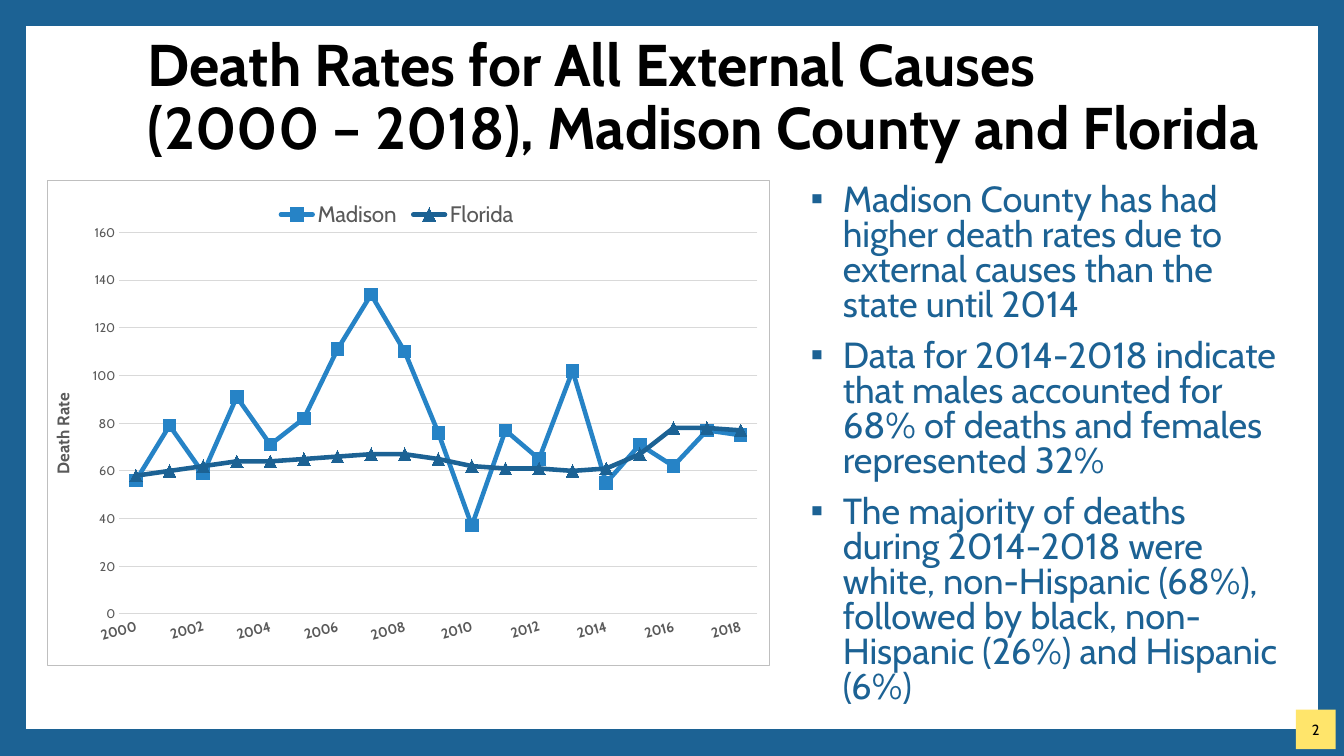
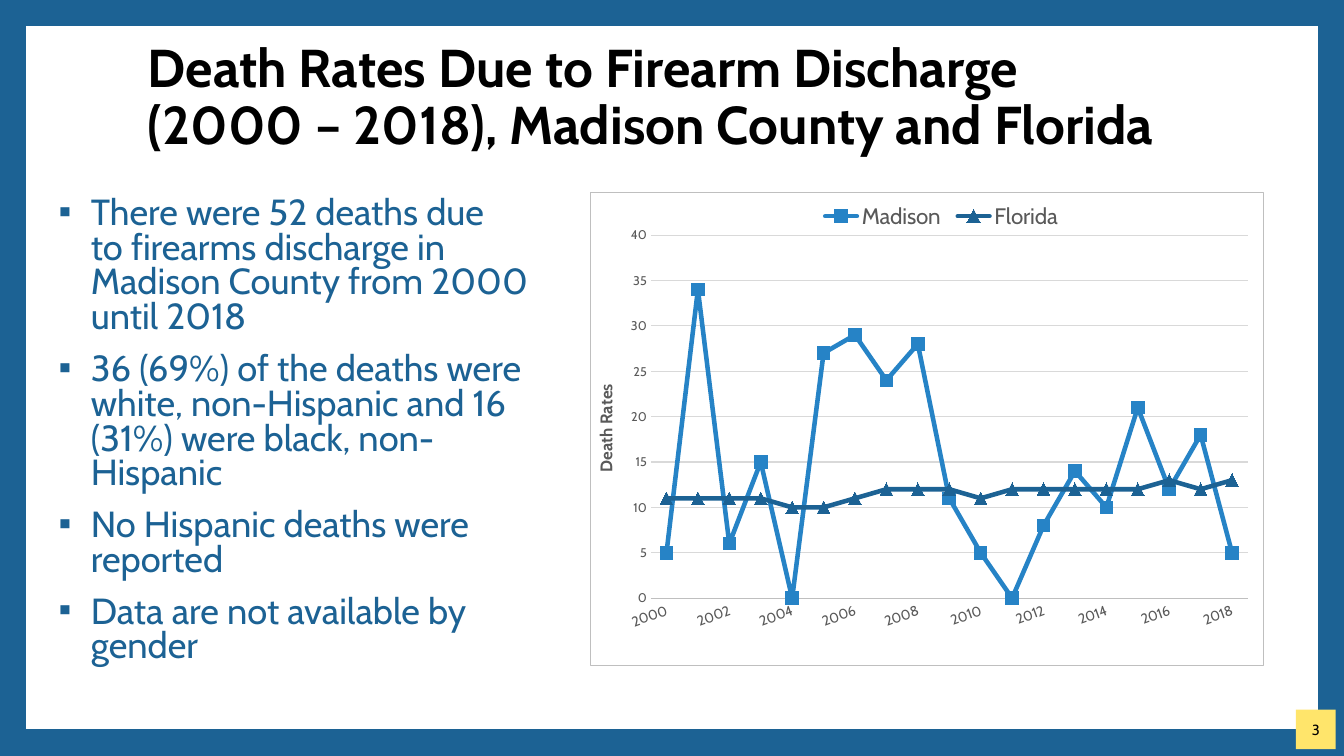
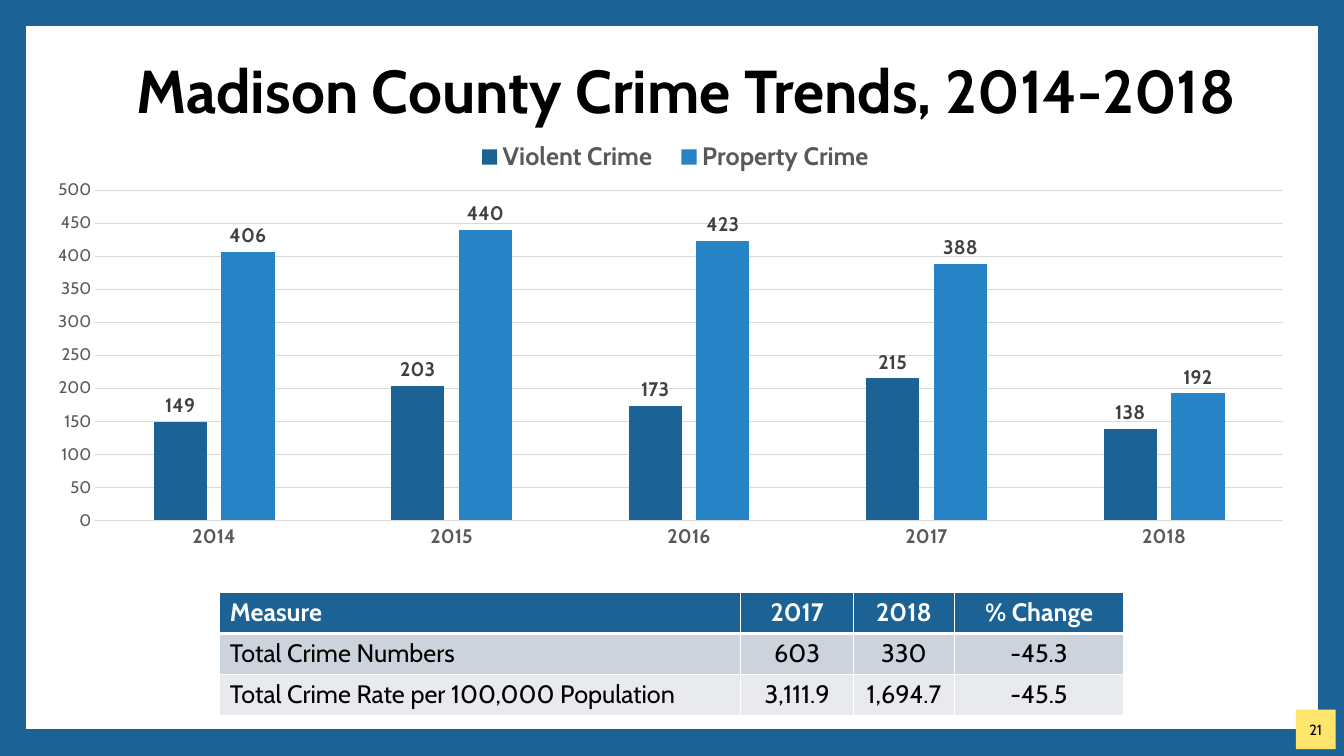
from dataclasses import dataclass
from typing import Any, Optional

from lxml import etree
from pptx import Presentation
from pptx.chart.data import CategoryChartData
from pptx.dml.color import RGBColor
from pptx.enum.chart import (XL_CHART_TYPE, XL_LABEL_POSITION, XL_LEGEND_POSITION,
                             XL_MARKER_STYLE, XL_TICK_MARK)
from pptx.enum.shapes import MSO_SHAPE
from pptx.enum.text import MSO_ANCHOR, MSO_AUTO_SIZE, PP_ALIGN
from pptx.oxml.ns import qn
from pptx.util import Cm, Pt

LINES = XL_CHART_TYPE.LINE_MARKERS
BARS = XL_CHART_TYPE.COLUMN_CLUSTERED
SQUARE = XL_MARKER_STYLE.SQUARE
TRIANGLE = XL_MARKER_STYLE.TRIANGLE
OUTSIDE = XL_LABEL_POSITION.OUTSIDE_END
BOTTOM = XL_LEGEND_POSITION.BOTTOM
NO_TICK = XL_TICK_MARK.NONE
RECT = MSO_SHAPE.RECTANGLE
MIDDLE = MSO_ANCHOR.MIDDLE
LEFT, CENTER = PP_ALIGN.LEFT, PP_ALIGN.CENTER
NO_FIT = MSO_AUTO_SIZE.NONE

FONT = "Cabin"
NAVY = RGBColor(0x1C, 0x62, 0x94)
BLUE = RGBColor(0x26, 0x83, 0xC6)
YELLOW = RGBColor(0xFF, 0xE5, 0x6B)
BLACK = RGBColor(0, 0, 0)
WHITE = RGBColor(0xFF, 0xFF, 0xFF)
DARK = RGBColor(0x40, 0x40, 0x40)
GREY = RGBColor(0x59, 0x59, 0x59)
EDGE = RGBColor(0xBF, 0xBF, 0xBF)
GRID = RGBColor(0xD9, 0xD9, 0xD9)
BANDS = [RGBColor(0xCD, 0xD3, 0xDC), RGBColor(0xE8, 0xEA, 0xEE)]

WIDE, HIGH = 33.87, 19.05
YEARS = [str(year) for year in range(2000, 2019)]


@dataclass
class Box:
    """A place on the slide, in centimetres."""
    left: float
    top: float
    width: float
    height: float

    def lengths(self) -> tuple:
        return Cm(self.left), Cm(self.top), Cm(self.width), Cm(self.height)


@dataclass
class Series:
    name: str
    values: list
    color: RGBColor
    marker: Any = None


@dataclass
class Graph:
    """A chart; plot, legend and spot are percentages of its box."""
    box: Box
    kind: Any
    cats: list
    series: list
    top: int
    step: int
    plot: tuple
    legend: tuple
    sizes: tuple  # legend, category axis, value axis
    bold: bool = True  # category labels
    base: RGBColor = GRID
    title: str = ""
    spot: tuple = ()
    tilt: int = 0


@dataclass
class Page:
    number: str
    title: str
    size: float
    graph: Graph
    spot: Box
    body: Optional[Box] = None
    points: tuple = ()
    rows: tuple = ()


# Text and XML helpers
def style(font: Any, size: float, color: RGBColor, bold: bool = False) -> None:
    font.name, font.size, font.bold = FONT, Pt(size), bold
    font.color.rgb = color


def style_runs(para: Any, size: float, color: RGBColor, bold: bool = False) -> None:
    for run in para.runs:
        style(run.font, size, color, bold)


def add(parent: Any, tag: str, **attrs: str) -> Any:
    return etree.SubElement(parent, qn(tag), attrs)


def add_color(parent: Any, color: RGBColor) -> None:
    add(parent, "a:srgbClr", val=str(color))


def place(parent: Any, after: str, spot: tuple, inner: bool = False) -> None:
    """Give a chart part a fixed place, from percentages of the chart."""
    old = parent.find(qn("c:layout"))
    if old is not None:
        parent.remove(old)
    layout = etree.Element(qn("c:layout"))
    manual = add(layout, "c:manualLayout")
    if inner:
        add(manual, "c:layoutTarget", val="inner")
    for mode in ("xMode", "yMode"):
        add(manual, f"c:{mode}", val="edge")
    for key, share in zip("xywh", spot):
        add(manual, f"c:{key}", val=f"{share / 100:.3f}")
    index = parent.index(parent.find(qn(after))) + 1 if after else 0
    parent.insert(index, layout)


# Shared slide parts
def add_frame(slide: Any, number: str) -> None:
    frame = slide.shapes.add_shape(RECT, *Box(0.31, 0.31, 33.25, 18.4).lengths())
    frame.shadow.inherit = False
    frame.fill.background()
    frame.line.color.rgb = NAVY
    frame.line.width = Pt(19)
    add(frame._element.spPr.find(qn("a:ln")), "a:miter", lim="800000")

    badge = slide.shapes.add_shape(RECT, *Box(32.66, 17.88, 1, 1).lengths())
    badge.shadow.inherit = False
    badge.fill.solid()
    badge.fill.fore_color.rgb = YELLOW
    badge.line.fill.background()
    text = badge.text_frame
    text.margin_left = text.margin_right = 0
    text.vertical_anchor = MIDDLE
    text.text = number
    text.paragraphs[0].alignment = CENTER
    style_runs(text.paragraphs[0], 10.5, BLACK)


def set_title(slide: Any, page: Page) -> None:
    title = slide.shapes.title
    title.left, title.top, title.width, title.height = page.spot.lengths()
    text = title.text_frame
    text.auto_size = NO_FIT
    text.word_wrap = True
    text.vertical_anchor = MIDDLE
    para = text.paragraphs[0]
    para.text = page.title
    para.alignment = LEFT
    para.line_spacing = 0.9
    style_runs(para, page.size, BLACK, True)


def add_points(slide: Any, box: Box, points: tuple) -> None:
    text = slide.shapes.add_textbox(*box.lengths()).text_frame
    text.word_wrap = True
    for i, point in enumerate(points):
        para = text.add_paragraph() if i else text.paragraphs[0]
        para.text = point
        props = para._p.get_or_add_pPr()
        props.set("marL", str(Cm(0.94)))
        props.set("indent", str(Cm(-0.81)))
        add_color(add(props, "a:buClr"), NAVY)
        add(props, "a:buFont", typeface="Arial")
        add(props, "a:buChar", char="▪")
        para.line_spacing = 0.8
        para.space_after = Pt(12)
        style_runs(para, 25.9, NAVY)


# Charts
def style_axes(chart: Any, graph: Graph) -> None:
    cat, val = chart.category_axis, chart.value_axis
    for axis in (cat, val):
        axis.major_tick_mark = axis.minor_tick_mark = NO_TICK
    style(cat.tick_labels.font, graph.sizes[1], GREY, graph.bold)
    style(val.tick_labels.font, graph.sizes[2], GREY)
    cat.format.line.color.rgb = graph.base
    cat.format.line.width = Pt(0.75)
    val.format.line.fill.background()
    val.minimum_scale, val.maximum_scale = 0, graph.top
    val.major_unit = graph.step
    val.has_major_gridlines = True
    val.major_gridlines.format.line.color.rgb = GRID
    val.major_gridlines.format.line.width = Pt(0.75)
    if graph.tilt:
        body = cat._element.find(qn("c:txPr")).find(qn("a:bodyPr"))
        body.set("rot", str(graph.tilt * 60000))
        skip = etree.Element(qn("c:tickLblSkip"), val="2")
        cat._element.find(qn("c:noMultiLvlLbl")).addprevious(skip)
    if graph.title:
        text = val.axis_title.text_frame
        text.text = graph.title
        style_runs(text.paragraphs[0], 12, GREY, True)
        text._txBody.find(qn("a:bodyPr")).set("rot", "-5400000")
        place(val.axis_title._element, "c:tx", graph.spot)


def style_lines(chart: Any, graph: Graph) -> None:
    for line, item in zip(chart.plots[0].series, graph.series):
        line.smooth = False
        line.format.line.color.rgb = item.color
        line.format.line.width = Pt(3.25)
        stroke = line._element.find(qn("c:spPr")).find(qn("a:ln"))
        stroke.set("cap", "rnd")
        add(stroke, "a:round")
        mark = line.marker
        mark.style, mark.size = item.marker, 9
        mark.format.fill.solid()
        mark.format.fill.fore_color.rgb = item.color
        mark.format.line.color.rgb = item.color
    # Thin border around the whole chart
    props = etree.Element(qn("c:spPr"))
    add(props, "a:noFill")
    edge = add(props, "a:ln", w=str(Pt(0.75)))
    add_color(add(edge, "a:solidFill"), EDGE)
    chart._chartSpace.find(qn("c:chart")).addnext(props)


def style_bars(chart: Any, graph: Graph) -> None:
    plot = chart.plots[0]
    plot.gap_width, plot.overlap = 219, -27
    for bars, item in zip(plot.series, graph.series):
        bars.format.fill.solid()
        bars.format.fill.fore_color.rgb = item.color
    plot.has_data_labels = True
    labels = plot.data_labels
    labels.show_value = True
    labels.position = OUTSIDE
    style(labels.font, 14, DARK, True)


def add_graph(slide: Any, graph: Graph) -> None:
    data = CategoryChartData()
    data.categories = graph.cats
    for item in graph.series:
        data.add_series(item.name, item.values)
    chart = slide.shapes.add_chart(graph.kind, *graph.box.lengths(), data).chart
    style(chart.font, 10, BLACK)
    chart.has_title = False
    chart.plots[0].vary_by_categories = False
    chart.has_legend = True
    legend = chart.legend
    legend.position = BOTTOM
    legend.include_in_layout = False
    style(legend.font, graph.sizes[0], GREY, graph.kind == BARS)
    place(legend._element, "c:legendPos", graph.legend)
    area = chart._chartSpace.find(qn("c:chart")).find(qn("c:plotArea"))
    place(area, "", graph.plot, True)
    style_axes(chart, graph)
    if graph.kind == LINES:
        style_lines(chart, graph)
    else:
        style_bars(chart, graph)


# Table
def add_border(cell: Any, row: int) -> None:
    props = cell._tc.get_or_add_tcPr()
    widths = {"L": 1, "R": 1, "T": 3 if row == 1 else 1, "B": 1 if row else 3}
    for side, width in widths.items():
        line = add(props, f"a:ln{side}", w=str(Pt(width)))
        add_color(add(line, "a:solidFill"), WHITE)


def add_grid(slide: Any, rows: tuple) -> None:
    widths, height = (13.13, 2.84, 2.54, 4.27), 1.03
    box = Box(5.54, 14.93, sum(widths), height * len(rows))
    table = slide.shapes.add_table(len(rows), len(widths), *box.lengths()).table
    for col, width in zip(table.columns, widths):
        col.width = Cm(width)
    for r, row in enumerate(rows):
        table.rows[r].height = Cm(height)
        for c, words in enumerate(row):
            cell = table.cell(r, c)
            add_border(cell, r)
            cell.fill.solid()
            cell.fill.fore_color.rgb = BANDS[r - 1] if r else NAVY
            para = cell.text_frame.paragraphs[0]
            para.text = words
            para.alignment = CENTER if c else LEFT
            style_runs(para, 18, BLACK if r else WHITE, r == 0)


# Content
def rates(madison: list, florida: list) -> list:
    return [Series("Madison", madison, BLUE, SQUARE),
            Series("Florida", florida, NAVY, TRIANGLE)]


WIDE_SPOT = Box(3.47, 1.16, 29.21, 2.67)

PAGES = [
    Page("2", "Death Rates for All External Causes\v(2000 – 2018), Madison County and Florida",
         42,
         Graph(Box(1.19, 4.54, 18.22, 12.24), LINES, YEARS,
               rates([56, 79, 59, 91, 71, 82, 111, 134, 110, 76, 37, 77, 65, 102, 55, 71,
                      62, 77, 75],
                     [58, 60, 62, 64, 64, 65, 66, 67, 67, 65, 62, 61, 61, 60, 61, 67,
                      78, 78, 77]),
               160, 20, (9.9, 10.7, 88.4, 78.7), (31, 4, 34.8, 6), (16, 10, 9),
               title="Death Rate", spot=(0.1, 43.2), tilt=-15),
         WIDE_SPOT, Box(20.05, 4.53, 12.62, 13.03),
         ("Madison County has had higher death rates due to external causes than the "
          "state until 2014",
          "Data for 2014-2018 indicate that males accounted for 68% of deaths and females "
          "represented 32%",
          "The majority of deaths during 2014-2018 were white, non-Hispanic (68%), followed "
          "by black, non-Hispanic (26%) and Hispanic (6%)")),
    Page("3", "Death Rates Due to Firearm Discharge\v(2000 – 2018), Madison County and Florida",
         38,
         Graph(Box(14.88, 4.84, 16.97, 11.94), LINES, YEARS,
               rates([5, 34, 6, 15, 0, 27, 29, 24, 28, 11, 5, 0, 8, 14, 10, 21, 12, 18, 5],
                     [11, 11, 11, 11, 10, 10, 11, 12, 12, 12, 11, 12, 12, 12, 12, 12,
                      13, 12, 13]),
               40, 5, (8.9, 9, 88.8, 76.8), (33.4, 2, 37.5, 6), (16, 10, 9),
               bold=False, base=EDGE, title="Death Rates", spot=(0.1, 39.9), tilt=-20),
         WIDE_SPOT, Box(1.1, 4.85, 13.26, 12.27),
         ("There were 52 deaths due\vto firearms discharge in Madison County from 2000 "
          "until 2018",
          "36 (69%) of the deaths were white, non-Hispanic and 16 (31%) were black, "
          "non-Hispanic",
          "No Hispanic deaths were reported",
          "Data are not available by gender")),
    Page("21", "Madison County Crime Trends, 2014-2018", 43.2,
         Graph(Box(1.14, 3.12, 31.57, 11.94), BARS, YEARS[-5:],
               [Series("Violent Crime", [149, 203, 173, 215, 138], NAVY),
                Series("Property Crime", [406, 440, 423, 388, 192], BLUE)],
               500, 50, (4, 14, 94.8, 69.7), (33.2, 3, 34.2, 8), (18, 14, 12)),
         Box(3.18, 1.04, 29.21, 2.67),
         rows=(("Measure", "2017", "2018", "% Change"),
               ("Total Crime Numbers", "603", "330", "-45.3"),
               ("Total Crime Rate per 100,000 Population", "3,111.9", "1,694.7", "-45.5"))),
]


def main() -> None:
    deck = Presentation()
    deck.slide_width, deck.slide_height = Cm(WIDE), Cm(HIGH)
    for page in PAGES:
        slide = deck.slides.add_slide(deck.slide_layouts[5])
        add_frame(slide, page.number)
        set_title(slide, page)
        if page.body:
            add_points(slide, page.body, page.points)
        add_graph(slide, page.graph)
        if page.rows:
            add_grid(slide, page.rows)
    deck.save("out.pptx")


if __name__ == "__main__":
    main()
